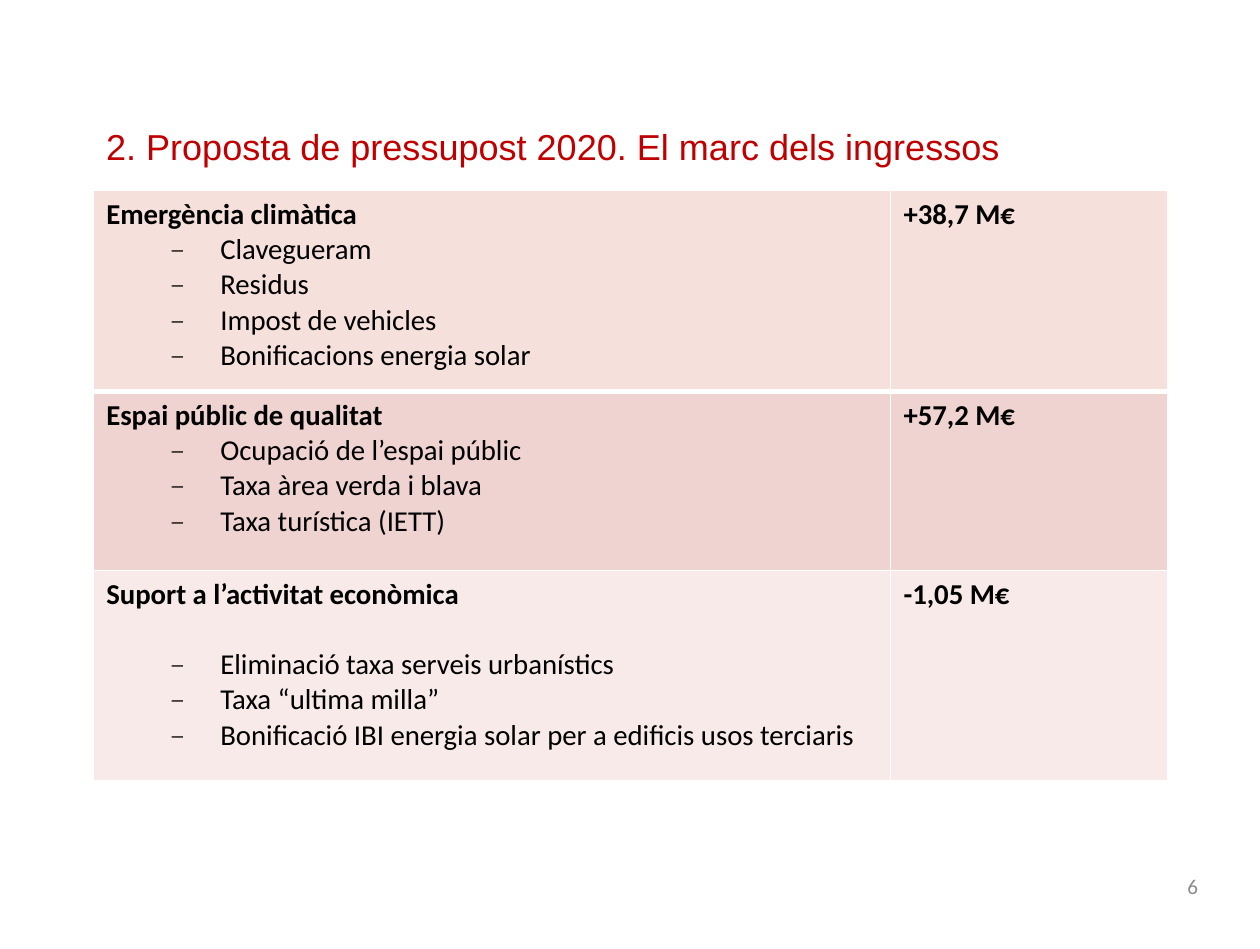
from dataclasses import dataclass

from lxml import etree
from pptx import Presentation
from pptx import util as u
from pptx.dml.color import RGBColor
from pptx.enum import text
from pptx.oxml import ns

PX = 9144  # EMU per px, at 100 px to the inch
COLORS = {
    "title": "C00000",
    "number": "8C8C8C",
    "body": "000000",
    "border": "FFFFFF",
    "climate": "F6E0DB",
    "space": "EED3D0",
    "economy": "F7EAE9",
}
COLUMN_WIDTHS = (615, 214)
BULLET_MARGIN, BULLET_INDENT = 88, -39
THIN, THICK = 1, 3


@dataclass(frozen=True)
class Label:
    wording: str
    left: int
    top: int
    width: int
    height: int
    size: float
    font: str
    color: str
    align: text.PP_ALIGN
    anchor: text.MSO_ANCHOR


@dataclass(frozen=True)
class IncomeRow:
    heading: str
    amount: str
    measures: tuple[str, ...]
    color: str
    height: int
    gap: float = 0  # points between heading and measures


LABELS = (
    Label("6", 707, 664, 227, 39, 11.7, "Calibri", "number",
          text.PP_ALIGN.RIGHT, text.MSO_ANCHOR.MIDDLE),
    Label("2. Proposta de pressupost 2020. El marc dels ingressos",
          72, 91, 765, 43, 20, "Arial", "title",
          text.PP_ALIGN.LEFT, text.MSO_ANCHOR.TOP),
)
INCOME_ROWS = (
    IncomeRow("Emergència climàtica", "+38,7 M€",
              ("Clavegueram", "Residus", "Impost de vehicles",
               "Bonificacions energia solar"), "climate", 155),
    IncomeRow("Espai públic de qualitat", "+57,2 M€",
              ("Ocupació de l’espai públic", "Taxa àrea verda i blava",
               "Taxa turística (IETT)"), "space", 138),
    IncomeRow("Suport a l’activitat econòmica", "-1,05 M€",
              ("Eliminació taxa serveis urbanístics", "Taxa “ultima milla”",
               "Bonificació IBI energia solar per a edificis usos terciaris"),
              "economy", 162, gap=19.5),
)


def px(length: int) -> u.Emu:
    return u.Emu(length * PX)


def rgb(name: str) -> RGBColor:
    return RGBColor.from_string(COLORS[name])


def write(para, wording: str, size: float, font: str, color: str,
          bold: bool = False) -> None:
    para.text = wording
    for span in para.runs:
        span.font.size = u.Pt(size)
        span.font.name = font
        span.font.bold = bold
        span.font.color.rgb = rgb(color)


def add_label(page, label: Label) -> None:
    box = page.shapes.add_textbox(px(label.left), px(label.top),
                                  px(label.width), px(label.height))
    frame = box.text_frame
    frame.word_wrap = True
    frame.vertical_anchor = label.anchor
    para = frame.paragraphs[0]
    para.alignment = label.align
    write(para, label.wording, label.size, label.font, label.color)


def add_bullet(para) -> None:
    properties = para._p.get_or_add_pPr()
    properties.set("marL", str(px(BULLET_MARGIN)))
    properties.set("indent", str(px(BULLET_INDENT)))
    etree.SubElement(properties, ns.qn("a:buChar")).set("char", "₋")


def style_cell(cell, color: str, top: int, bottom: int) -> None:
    """Fill a cell and draw its borders, with widths in points."""
    cell.fill.solid()
    cell.fill.fore_color.rgb = rgb(color)
    properties = cell._tc.get_or_add_tcPr()
    widths = {"a:lnL": THIN, "a:lnR": THIN, "a:lnT": top, "a:lnB": bottom}
    for position, (tag, width) in enumerate(widths.items()):
        line = etree.Element(ns.qn(tag), w=str(u.Pt(width)))
        fill = etree.SubElement(line, ns.qn("a:solidFill"))
        etree.SubElement(fill, ns.qn("a:srgbClr")).set("val", COLORS["border"])
        properties.insert(position, line)


def add_income_table(page) -> None:
    height = sum(row.height for row in INCOME_ROWS)
    table = page.shapes.add_table(
        len(INCOME_ROWS), len(COLUMN_WIDTHS), px(72), px(147),
        px(sum(COLUMN_WIDTHS)), px(height)).table
    table.first_row = table.horz_banding = False
    for column, width in zip(table.columns, COLUMN_WIDTHS):
        column.width = px(width)

    for index, row in enumerate(INCOME_ROWS):
        table.rows[index].height = px(row.height)
        for column, wording in enumerate((row.heading, row.amount)):
            cell = table.cell(index, column)
            style_cell(cell, row.color, top=THICK if index == 1 else THIN,
                       bottom=THICK if index == 0 else THIN)
            write(cell.text_frame.paragraphs[0], wording, 16, "Calibri",
                  "body", bold=True)
        frame = table.cell(index, 0).text_frame
        for order, measure in enumerate(row.measures):
            para = frame.add_paragraph()
            if order == 0 and row.gap:
                para.space_before = u.Pt(row.gap)
            add_bullet(para)
            write(para, measure, 16, "Calibri", "body")


def main() -> None:
    deck = Presentation()
    deck.slide_width, deck.slide_height = px(972), px(732)
    page = deck.slides.add_slide(deck.slide_layouts[6])
    for label in LABELS:
        add_label(page, label)
    add_income_table(page)
    deck.save("out.pptx")


if __name__ == "__main__":
    main()
